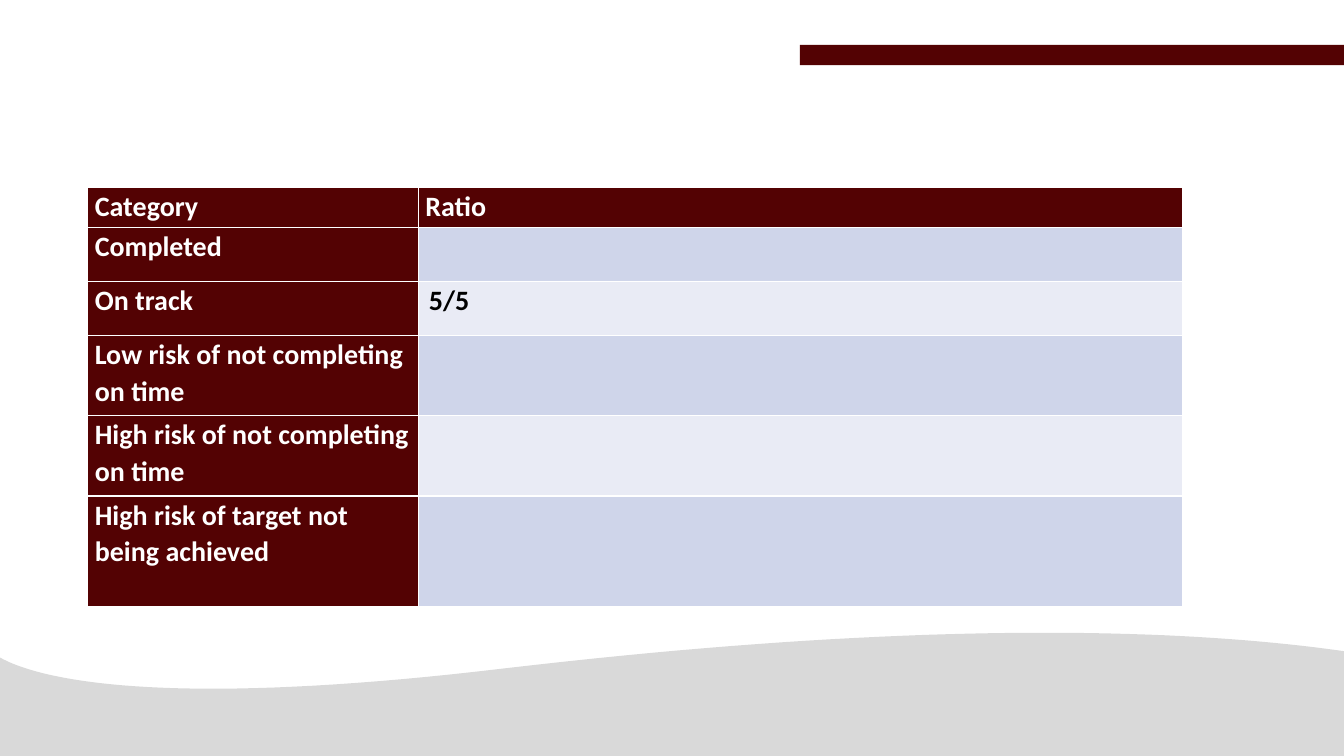
from pptx import Presentation
from pptx.dml.color import RGBColor
from pptx.enum.shapes import MSO_SHAPE
from pptx.util import Cm, Pt

RECTANGLE = MSO_SHAPE.RECTANGLE

COLORS = {
    "maroon": "530203",
    "wave": "D9D9D9",
    "band_dark": "CFD5EA",
    "band_light": "E9EBF5",
    "white": "FFFFFF",
    "black": "000000",
}
ROWS = [
    ("Category", "Ratio"),
    ("Completed", ""),
    ("On track", "5/5"),
    ("Low risk of not completing on time", ""),
    ("High risk of not completing on time", ""),
    ("High risk of target not being achieved", ""),
]
ROW_HEIGHTS = [1.01, 1.36, 1.36, 2.02, 2.02, 2.78]
COL_WIDTHS = [8.33, 19.25]
TABLE_LEFT, TABLE_TOP = 2.21, 4.73
SLIDE_W, SLIDE_H = 33.87, 19.05
WAVE_CURVES = [
    [(33.87, 16.41), (29.59, 15.8), (22.91, 15.65), (12.75, 16.84)],
    [(12.75, 16.84), (3.38, 17.96), (0.66, 16.97), (-0.05, 16.54)],
]
CURVE_STEPS = 40


def color(name):
    """Return the named palette colour."""
    return RGBColor.from_string(COLORS[name])


def paint(sp, name):
    """Give a shape a plain fill without line or shadow."""
    sp.fill.solid()
    sp.fill.fore_color.rgb = color(name)
    sp.line.fill.background()
    sp.shadow.inherit = False


def curve_points(curve):
    """Return points along a cubic curve, in lengths."""
    points = []
    for i in range(1, CURVE_STEPS + 1):
        t = i / CURVE_STEPS
        weights = ((1 - t) ** 3, 3 * t * (1 - t) ** 2, 3 * t * t * (1 - t), t ** 3)
        x, y = (sum(w * v for w, v in zip(weights, axis)) for axis in zip(*curve))
        points.append((Cm(x), Cm(y)))
    return points


def add_wave(slide):
    """Draw the grey wave along the bottom."""
    builder = slide.shapes.build_freeform(Cm(SLIDE_W), Cm(SLIDE_H))
    start_x, start_y = WAVE_CURVES[0][0]
    points = [(Cm(start_x), Cm(start_y))]
    for curve in WAVE_CURVES:
        points += curve_points(curve)
    points.append((points[-1][0], Cm(SLIDE_H)))
    builder.add_line_segments(points, close=True)
    paint(builder.convert_to_shape(), "wave")


def fill_cell(cell, text, row, col):
    """Write and colour one table cell."""
    heading = row == 0 or col == 0
    band = "band_dark" if row % 2 else "band_light"
    cell.fill.solid()
    cell.fill.fore_color.rgb = color("maroon" if heading else band)
    if not text:
        return
    cell.margin_left = Cm(0.18 if heading else 0.27)
    cell.margin_right = Cm(0.18)
    cell.margin_top = cell.margin_bottom = 0
    cell.text = text
    p = cell.text_frame.paragraphs[0]
    p.line_spacing = 1.07
    font = p.runs[0].font
    font.name, font.size, font.bold = "Calibri", Pt(20), True
    font.color.rgb = color("white" if heading else "black")


def add_status_table(slide):
    """Add the table of categories and ratios."""
    frame = slide.shapes.add_table(
        len(ROWS), len(COL_WIDTHS), Cm(TABLE_LEFT), Cm(TABLE_TOP),
        Cm(sum(COL_WIDTHS)), Cm(sum(ROW_HEIGHTS)))
    table = frame.table
    for column, width in zip(table.columns, COL_WIDTHS):
        column.width = Cm(width)
    for row, height in zip(table.rows, ROW_HEIGHTS):
        row.height = Cm(height)
    for r, texts in enumerate(ROWS):
        for c, text in enumerate(texts):
            fill_cell(table.cell(r, c), text, r, c)


def main():
    """Build and save the slide."""
    prs = Presentation()
    prs.slide_width, prs.slide_height = Cm(SLIDE_W), Cm(SLIDE_H)
    slide = prs.slides.add_slide(prs.slide_layouts[6])
    add_wave(slide)
    bar = slide.shapes.add_shape(RECTANGLE, Cm(20.16), Cm(1.13), Cm(13.71), Cm(0.51))
    paint(bar, "maroon")
    add_status_table(slide)
    prs.save("out.pptx")


if __name__ == "__main__":
    main()
